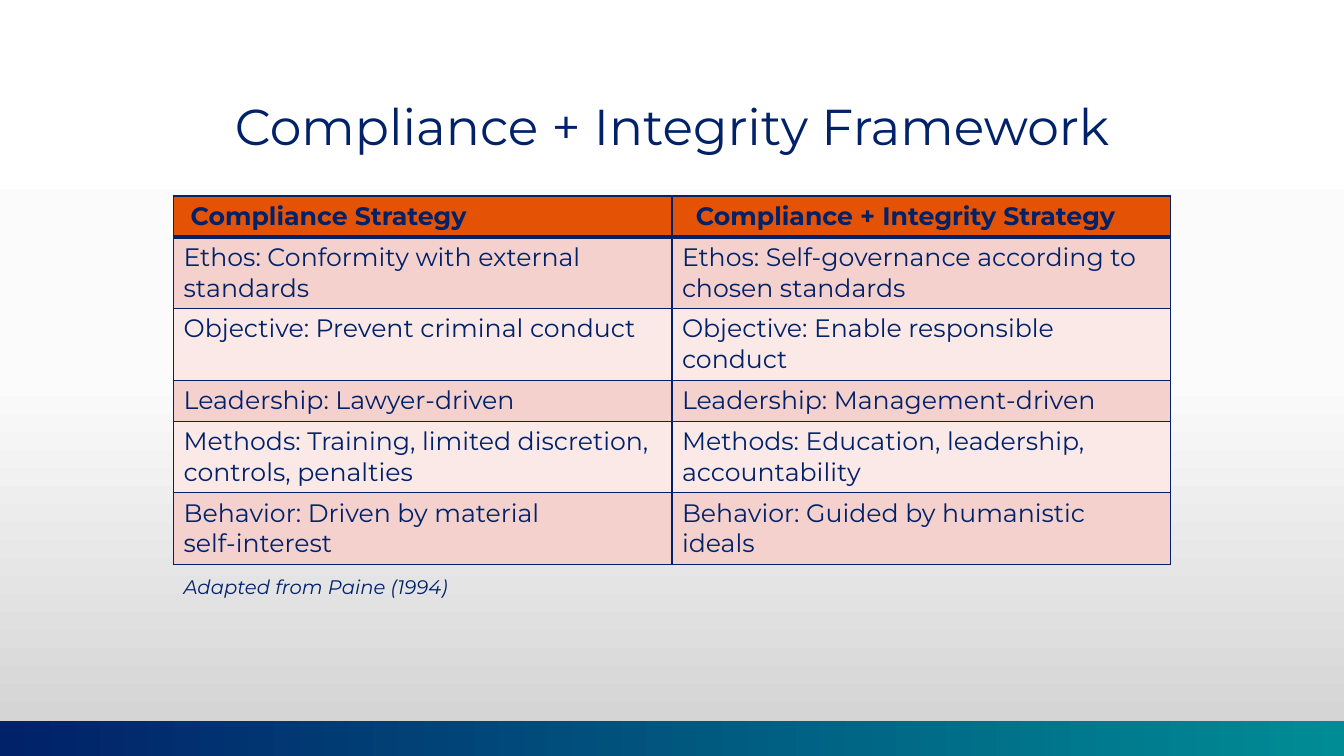
import copy

import pptx
import pptx.dml.color
import pptx.enum.shapes
import pptx.enum.text
import pptx.oxml
import pptx.oxml.ns
import pptx.util

Pt = pptx.util.Pt
NAVY, TEAL, ORANGE = "012169", "008C95", "E35205"
BANDS = ["F4D1CC", "FAE9E7"]
ROWS = [
    ("Compliance Strategy", "Compliance + Integrity Strategy"),
    ("Ethos: Conformity with external standards",
     "Ethos: Self-governance according to chosen standards"),
    ("Objective: Prevent criminal conduct", "Objective: Enable responsible conduct"),
    ("Leadership: Lawyer-driven", "Leadership: Management-driven"),
    ("Methods: Training, limited discretion, controls, penalties",
     "Methods: Education, leadership, accountability"),
    ("Behavior: Driven by material\nself-interest",
     "Behavior: Guided by humanistic ideals"),
]
HEIGHTS = [29.2, 51.2, 51.2, 29.2, 51.2, 51.2]


def color(code):
    return pptx.dml.color.RGBColor.from_string(code)


def style(frame, **values):
    """Give every run in the frame the slide font plus the given values."""
    for para in frame.paragraphs:
        for run in para.runs:
            for key, value in {"name": "Montserrat", **values}.items():
                setattr(run.font, key, value)
            run.font.color.rgb = color(NAVY)


deck = pptx.Presentation()
deck.slide_width, deck.slide_height = Pt(960), Pt(540)
slide = deck.slides.add_slide(deck.slide_layouts[5])

# Background: three stops from top to bottom
back = slide.background.fill
back.gradient()
back.gradient_angle = 270
first = next(slide.element.iter(pptx.oxml.ns.qn("a:gs")))
first.addnext(copy.deepcopy(first))
for stop, place, code in zip(back.gradient_stops, (0, 0.5, 1), ("FFFFFF", "FBFBFB", "D1D1D1")):
    stop.position = place
    stop.color.rgb = color(code)

# Title
title = slide.shapes.title
for key, value in {"left": 74, "top": 57, "width": 812, "height": 70}.items():
    setattr(title, key, Pt(value))
frame = title.text_frame
frame.text = "Compliance + Integrity Framework"
frame.auto_size = pptx.enum.text.MSO_AUTO_SIZE.NONE
frame.vertical_anchor = pptx.enum.text.MSO_ANCHOR.MIDDLE
frame.paragraphs[0].alignment = pptx.enum.text.PP_ALIGN.CENTER
frame.paragraphs[0].line_spacing = 0.9
style(frame, size=Pt(36))

# Footer bar
bar = slide.shapes.add_shape(
    pptx.enum.shapes.MSO_SHAPE.RECTANGLE, Pt(0), Pt(515), Pt(960), Pt(25))
bar.shadow.inherit = False
bar.line.fill.background()
bar.fill.gradient()
bar.fill.gradient_angle = 0
for stop, place, code in zip(bar.fill.gradient_stops, (0, 1), (NAVY, TEAL)):
    stop.position = place
    stop.color.rgb = color(code)

# Strategy table
table = slide.shapes.add_table(
    len(ROWS), 2, Pt(124), Pt(140), Pt(712), Pt(sum(HEIGHTS))).table
for r, (texts, height) in enumerate(zip(ROWS, HEIGHTS)):
    table.rows[r].height = Pt(height)
    head = r == 0
    for c, text in enumerate(texts):
        cell = table.cell(r, c)
        cell.text = text
        style(cell.text_frame, size=Pt(18), bold=head)
        if head:
            cell.margin_left = Pt(12.2 + 5 * c)
        props = cell._tc.get_or_add_tcPr()
        for side in "LRTB":
            thick = (r, side) in ((0, "B"), (1, "T"))
            props.append(pptx.oxml.parse_xml(
                f'<a:ln{side} {pptx.oxml.ns.nsdecls("a")} w="{Pt(3 if thick else 1)}">'
                f'<a:solidFill><a:srgbClr val="{NAVY}"/></a:solidFill></a:ln{side}>'))
        cell.fill.solid()
        cell.fill.fore_color.rgb = color(ORANGE if head else BANDS[(r - 1) % 2])

# Source line
note = slide.shapes.add_textbox(Pt(124), Pt(407), Pt(320), Pt(24)).text_frame
note.word_wrap = True
note.text = "Adapted from Paine (1994)"
style(note, size=Pt(14), italic=True)

deck.save("out.pptx")
